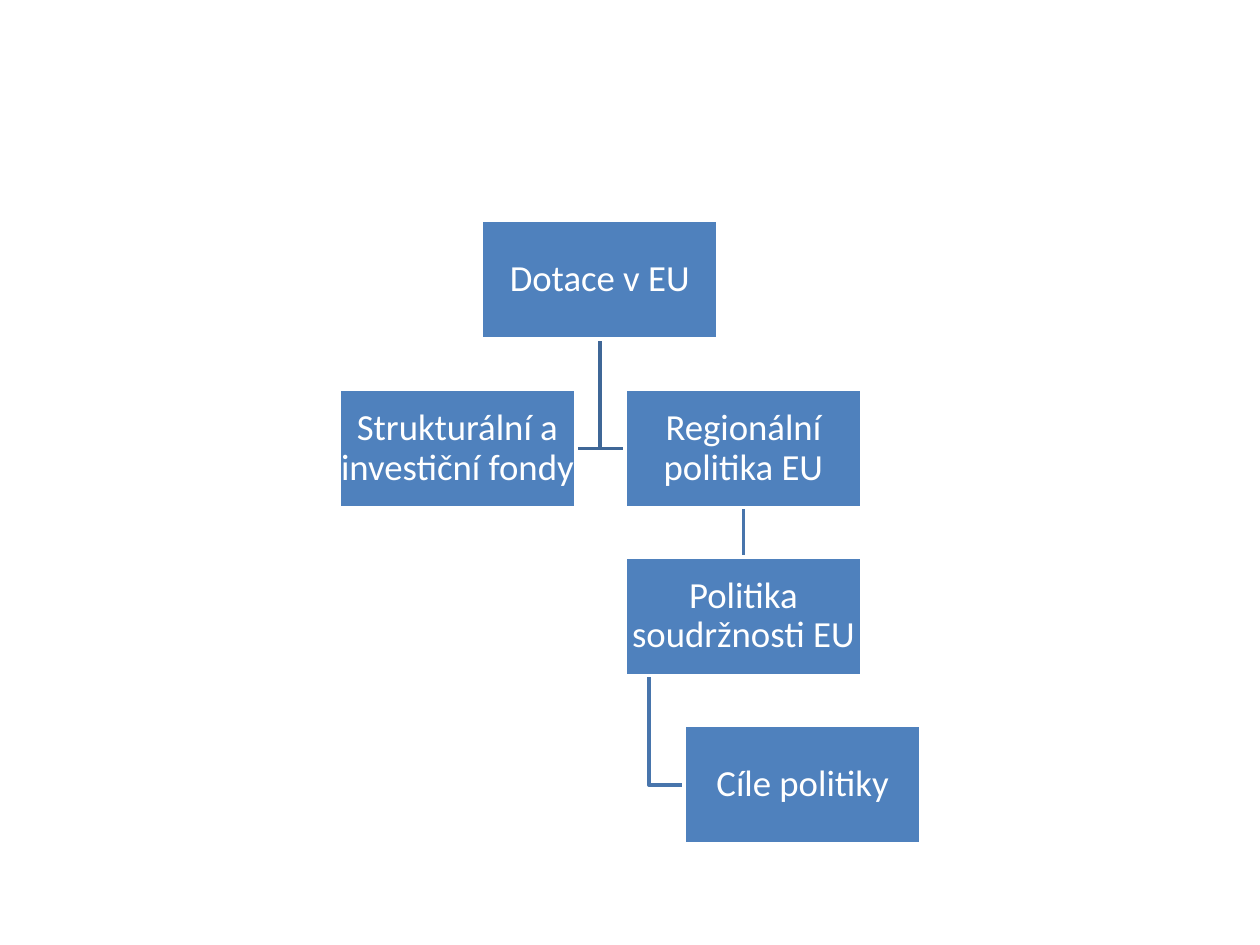
from dataclasses import dataclass

from lxml.etree import SubElement
from pptx import Presentation
from pptx.dml.color import RGBColor
from pptx.enum.shapes import MSO_CONNECTOR, MSO_SHAPE
from pptx.enum.text import MSO_ANCHOR, PP_ALIGN
from pptx.oxml.ns import qn
from pptx.util import Inches, Pt


@dataclass(frozen=True)
class Theme:
    box_fill: RGBColor = RGBColor(0x4F, 0x81, 0xBD)
    white: RGBColor = RGBColor(0xFF, 0xFF, 0xFF)
    upper_link: RGBColor = RGBColor(0x3F, 0x67, 0x97)
    lower_link: RGBColor = RGBColor(0x48, 0x75, 0xAC)
    font: str = "Calibri"
    text_size: Pt = Pt(21)
    line_width: Pt = Pt(2)


class OrganizationChart:
    def __init__(self, slide, theme):
        self.slide = slide
        self.theme = theme

    def style_line(self, line, color):
        line.color.rgb = color
        line.width = self.theme.line_width

    def box(self, text, left, top, width, height):
        shape = self.slide.shapes.add_shape(
            MSO_SHAPE.RECTANGLE, Inches(left), Inches(top), Inches(width), Inches(height)
        )
        shape.shadow.inherit = False
        shape.fill.solid()
        shape.fill.fore_color.rgb = self.theme.box_fill
        self.style_line(shape.line, self.theme.white)
        frame = shape.text_frame
        frame.word_wrap = True
        frame.vertical_anchor = MSO_ANCHOR.MIDDLE
        frame.margin_left = frame.margin_right = Inches(0.01)
        frame.margin_top = frame.margin_bottom = Inches(0.01)
        paragraph = frame.paragraphs[0]
        paragraph.alignment = PP_ALIGN.CENTER
        paragraph.line_spacing = 0.9
        run = paragraph.add_run()
        run.text = text
        run.font.name = self.theme.font
        run.font.size = self.theme.text_size
        run.font.color.rgb = self.theme.white

    def elbow(self, start, end, color):
        corner = (start[0], end[1])
        points = [(Inches(x), Inches(y)) for x, y in (start, corner, end)]
        builder = self.slide.shapes.build_freeform(*points[0])
        builder.add_line_segments(points[1:], close=False)
        shape = builder.convert_to_shape()
        shape.shadow.inherit = False
        shape.fill.background()
        self.style_line(shape.line, color)

    def straight(self, start, end, color):
        connector = self.slide.shapes.add_connector(
            MSO_CONNECTOR.STRAIGHT, *(Inches(value) for value in (*start, *end))
        )
        self.style_line(connector.line, color)
        SubElement(connector._element.spPr, qn("a:effectLst"))


def main():
    presentation = Presentation()
    presentation.slide_width = Inches(10)
    presentation.slide_height = Inches(7.5)
    slide = presentation.slides.add_slide(presentation.slide_layouts[6])
    theme = Theme()
    chart = OrganizationChart(slide, theme)

    width, height = 1.88, 0.94
    tops = [1.75, 3.09, 4.42, 5.76]
    bottoms = [top + height for top in tops]
    middles = [top + height / 2 for top in tops]
    root_left, funds_left, policy_left, goals_left = 3.82, 2.69, 4.96, 5.43
    root_center = root_left + width / 2
    policy_center = policy_left + width / 2

    chart.elbow((5.15, bottoms[2]), (goals_left, middles[3]), theme.lower_link)
    chart.straight((policy_center, bottoms[1]), (policy_center, tops[2]), theme.lower_link)
    for side in (policy_left, funds_left + width):
        chart.elbow((root_center, bottoms[0]), (side, middles[1]), theme.upper_link)

    boxes = [
        ("Dotace v EU", root_left, 0),
        ("Strukturální a investiční fondy", funds_left, 1),
        ("Regionální politika EU", policy_left, 1),
        ("Politika soudržnosti EU", policy_left, 2),
        ("Cíle politiky", goals_left, 3),
    ]
    for text, left, level in boxes:
        chart.box(text, left, tops[level], width, height)

    presentation.save("out.pptx")


if __name__ == "__main__":
    main()
